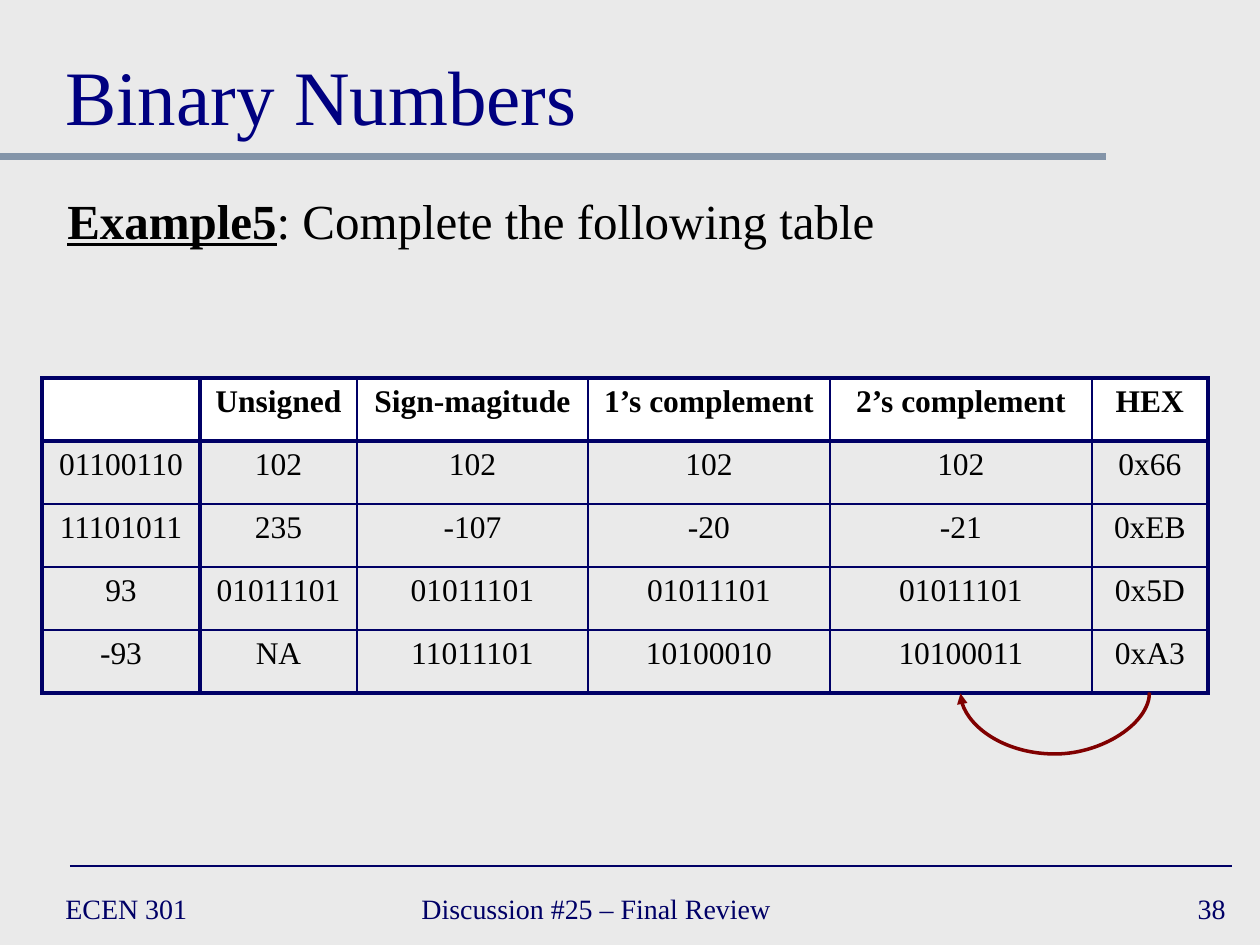
"""Build the binary numbers review slide."""
from typing import NamedTuple

from lxml import etree
from pptx import Presentation
from pptx import util as u
from pptx.dml.color import RGBColor
from pptx.enum import shapes, text
from pptx.oxml import ns

PX = u.Inches(1) / 126
FONT = "Times New Roman"
COLORS = {"bg": "EAEAEA", "title": "000080", "navy": "000066", "bar": "8495A9",
          "ink": "000000", "head": "FFFFFF", "arrow": "800000"}


class Label(NamedTuple):
    x: int
    y: int
    w: int
    h: int
    runs: list[tuple[str, bool]]
    size: int
    color: str
    anchor: text.MSO_ANCHOR = text.MSO_ANCHOR.MIDDLE
    align: text.PP_ALIGN = text.PP_ALIGN.LEFT


class Rule(NamedTuple):
    x1: int
    x2: int
    y: int
    color: str
    width: int


FOOTER_Y, FOOTER_H = 882, 53
LABELS = [
    Label(53, FOOTER_Y, 273, FOOTER_H, [("ECEN 301", False)], 16, "navy"),
    Label(409, FOOTER_Y, 483, FOOTER_H, [("Discussion #25 – Final Review", False)], 16, "navy"),
    Label(976, FOOTER_Y, 262, FOOTER_H, [("38", False)], 16, "navy",
          align=text.PP_ALIGN.RIGHT),
    Label(53, 21, 1155, 126, [("Binary Numbers", False)], 44, "title", text.MSO_ANCHOR.BOTTOM),
    Label(55, 184, 1120, 194, [("Example5", True), (": Complete the following table", False)],
          28, "ink", text.MSO_ANCHOR.TOP),
]
RULES = [Rule(0, 1106, 157, "bar", 4), Rule(70, 1232, 866, "navy", 1)]

TABLE_X, TABLE_Y, ROW_H = 42, 378, 63
COLS = [158, 157, 231, 242, 262, 116]
ROWS = [
    ["", "Unsigned", "Sign-magitude", "1’s complement", "2’s complement", "HEX"],
    ["01100110", "102", "102", "102", "102", "0x66"],
    ["11101011", "235", "-107", "-20", "-21", "0xEB"],
    ["93", "01011101", "01011101", "01011101", "01011101", "0x5D"],
    ["-93", "NA", "11011101", "10100010", "10100011", "0xA3"],
]


def px(n: float) -> u.Emu:
    """Turn pixels into EMU."""
    return u.Emu(round(n * PX))


def rgb(name: str) -> RGBColor:
    """Look up a named colour."""
    return RGBColor.from_string(COLORS[name])


def add_run(p, content: str, *, size: int, color: str, bold: bool = False,
            underline: bool = False) -> None:
    """Append formatted text to a paragraph."""
    r = p.add_run()
    r.text = content
    r.font.name, r.font.size = FONT, u.Pt(size)
    r.font.bold, r.font.underline = bold, underline
    r.font.color.rgb = rgb(color)


def add_label(s, label: Label) -> None:
    """Draw a text box."""
    sp = s.shapes.add_textbox(px(label.x), px(label.y), px(label.w), px(label.h))
    tf = sp.text_frame
    tf.word_wrap, tf.vertical_anchor = True, label.anchor
    p = tf.paragraphs[0]
    p.alignment = label.align
    for content, strong in label.runs:
        add_run(p, content, size=label.size, color=label.color, bold=strong, underline=strong)


def style_line(sp, color: str, width: float) -> None:
    """Colour a connector and remove its shadow."""
    sp.line.color.rgb, sp.line.width = rgb(color), u.Pt(width)
    etree.SubElement(sp._element.spPr, ns.qn("a:effectLst"))


def add_rule(s, rule: Rule) -> None:
    """Draw a horizontal rule."""
    sp = s.shapes.add_connector(shapes.MSO_CONNECTOR.STRAIGHT, px(rule.x1), px(rule.y),
                                px(rule.x2), px(rule.y))
    style_line(sp, rule.color, rule.width)


def set_borders(cell, thick: dict[str, bool]) -> None:
    """Give each side of a cell a thick or thin border."""
    tcPr = cell._tc.get_or_add_tcPr()
    for side, is_thick in thick.items():
        ln = etree.SubElement(tcPr, ns.qn(f"a:ln{side}"), w=str(u.Pt(2.25 if is_thick else 1)))
        fill = etree.SubElement(ln, ns.qn("a:solidFill"))
        etree.SubElement(fill, ns.qn("a:srgbClr"), val=COLORS["navy"])


def add_number_table(s) -> None:
    """Draw the table of number representations."""
    table = s.shapes.add_table(len(ROWS), len(COLS), px(TABLE_X), px(TABLE_Y),
                               px(sum(COLS)), px(ROW_H * len(ROWS))).table
    table.first_row = table.horz_banding = False
    for column, width in zip(table.columns, COLS):
        column.width = px(width)
    thick_x, thick_y = {0, 1, len(COLS)}, {0, 1, len(ROWS)}
    for i, values in enumerate(ROWS):
        table.rows[i].height = px(ROW_H)
        for j, value in enumerate(values):
            cell = table.cell(i, j)
            set_borders(cell, {"L": j in thick_x, "R": j + 1 in thick_x,
                               "T": i in thick_y, "B": i + 1 in thick_y})
            if i == 0:
                cell.fill.solid()
                cell.fill.fore_color.rgb = rgb("head")
            else:
                cell.fill.background()
            p = cell.text_frame.paragraphs[0]
            p.alignment = text.PP_ALIGN.CENTER
            if value:
                add_run(p, value, size=18, color="ink", bold=i == 0)


def add_loop_arrow(s, x1: int, x2: int, y: int, drop: int) -> None:
    """Draw a curved arrow that hangs below a level line."""
    mid, half = (x1 + x2) / 2, (x1 - x2) / 2
    sp = s.shapes.add_connector(shapes.MSO_CONNECTOR.CURVE, px(mid), px(y - half),
                                px(mid + 1), px(y + half))
    spPr = sp._element.spPr
    spPr.find(ns.qn("a:xfrm")).set("rot", "5400000")
    guides = spPr.find(ns.qn("a:prstGeom")).get_or_add_avLst()
    etree.SubElement(guides, ns.qn("a:gd"), name="adj1", fmla=f"val {drop * 100000}")
    style_line(sp, "arrow", 2)
    etree.SubElement(sp.line._get_or_add_ln(), ns.qn("a:tailEnd"), type="triangle")


def main() -> None:
    """Assemble and save the slide."""
    prs = Presentation()
    prs.slide_width, prs.slide_height = px(1260), px(945)
    s = prs.slides.add_slide(prs.slide_layouts[6])
    s.background.fill.solid()
    s.background.fill.fore_color.rgb = rgb("bg")
    for rule in RULES:
        add_rule(s, rule)
    for label in LABELS:
        add_label(s, label)
    add_number_table(s)
    add_loop_arrow(s, 1149, 960, TABLE_Y + ROW_H * len(ROWS), 62)
    prs.save("out.pptx")


if __name__ == "__main__":
    main()
